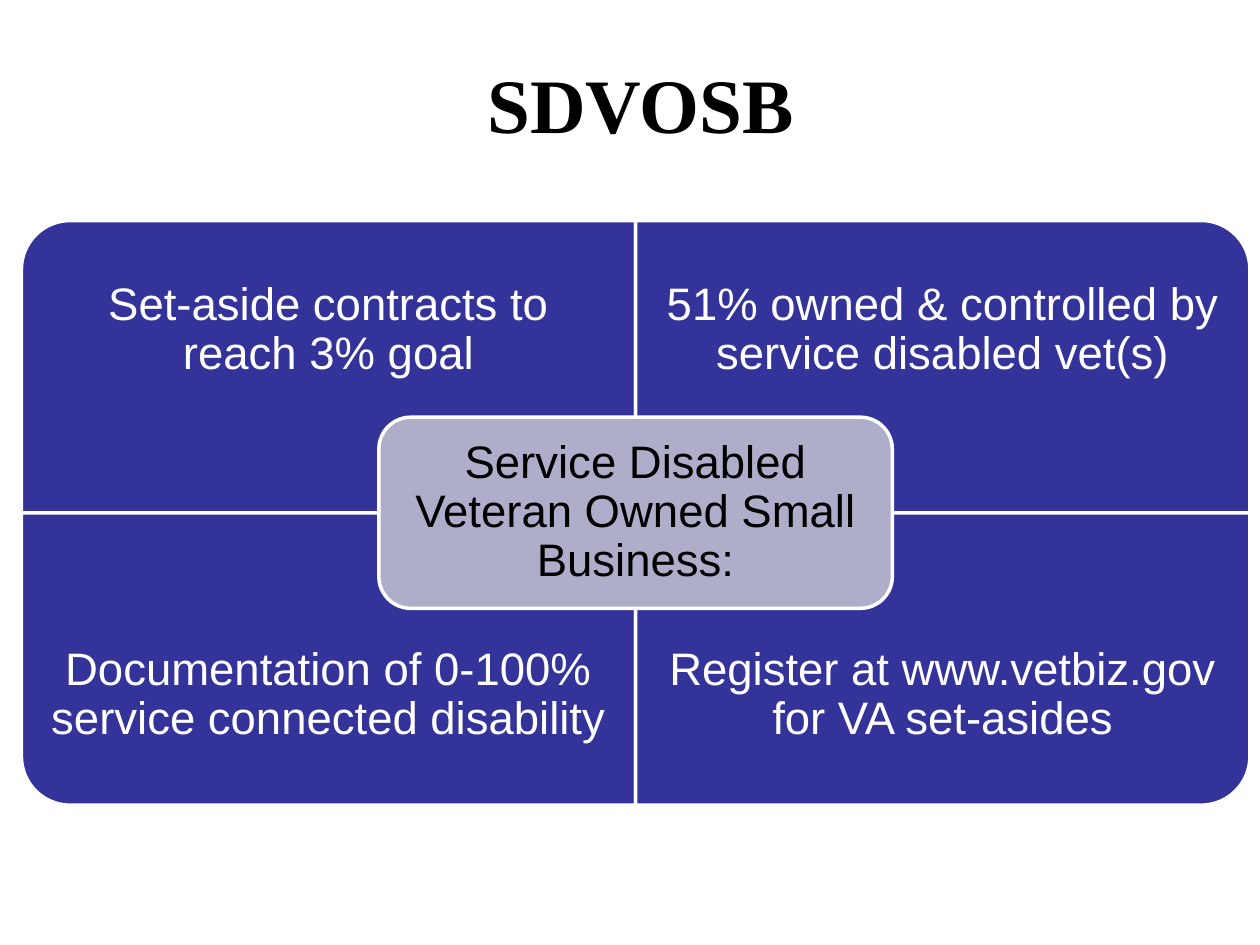
from pptx import Presentation
from pptx.dml.color import RGBColor
from pptx.enum import shapes, text
from pptx.util import Inches, Pt

COLORS = {"panel": "333399", "center": "AEAECA", "white": "FFFFFF", "black": "000000"}
W, H = 10, 7.5

# Column, row, rotation that turns the round corner outwards, wording
QUADRANTS = [
    (0, 0, 270, "Set-aside contracts to reach 3% goal"),
    (1, 0, 0, "51% owned & controlled by service disabled vet(s)"),
    (0, 1, 180, "Documentation of 0-100% service connected disability"),
    (1, 1, 90, "Register at www.vetbiz.gov for VA set-asides"),
]


def color(name):
    return RGBColor.from_string(COLORS[name])


def add_text(slide, box, words, ink, inset, size=26, font="Arial", bold=False, spacing=0.9):
    sp = slide.shapes.add_textbox(*map(Inches, box))
    tf = sp.text_frame
    tf.word_wrap = True
    tf.vertical_anchor = text.MSO_ANCHOR.MIDDLE
    tf.margin_left = tf.margin_right = Inches(inset[0])
    tf.margin_top = tf.margin_bottom = Inches(inset[1])
    p = tf.paragraphs[0]
    p.alignment = text.PP_ALIGN.CENTER
    p.line_spacing = spacing
    r = p.add_run()
    r.text = words
    r.font.size, r.font.name, r.font.bold = Pt(size), font, bold
    r.font.color.rgb = color(ink)


def add_panel(slide, kind, box, fill, rotation=0):
    x, y, w, h = box
    # A quarter turn swaps the sides around the same centre
    if rotation % 180:
        x, y, w, h = x + (w - h) / 2, y + (h - w) / 2, h, w
    sp = slide.shapes.add_shape(kind, *map(Inches, (x, y, w, h)))
    sp.rotation = rotation
    sp.shadow.inherit = False
    sp.fill.solid()
    sp.fill.fore_color.rgb = color(fill)
    sp.line.color.rgb = color("white")
    sp.line.width = Pt(2)


def add_title(slide, box):
    add_text(slide, box, "SDVOSB", "black", (0.1, 0.05), 44, "Times New Roman", True, 1)


def add_matrix(slide, box):
    x, y, w, h = box
    col, row = w / 2, h / 2

    # Four quadrants, with text in the outer three quarters of each
    text_h = row * 0.75
    for c, r, rotation, words in QUADRANTS:
        left, top = x + c * col, y + r * row
        add_panel(slide, shapes.MSO_SHAPE.ROUND_1_RECTANGLE, (left, top, col, row),
                  "panel", rotation)
        text_top = top + r * (row - text_h)
        add_text(slide, (left, text_top, col, text_h), words, "white", (0.2, 0.2))

    # Label over the crossing
    cw, ch, pad = w * 0.418, h * 0.327, 0.07
    left, top = x + (w - cw) / 2, y + (h - ch) / 2
    add_panel(slide, shapes.MSO_SHAPE.ROUNDED_RECTANGLE, (left, top, cw, ch), "center")
    add_text(slide, (left + pad, top + pad, cw - 2 * pad, ch - 2 * pad),
             "Service Disabled Veteran Owned Small Business:", "black", (0.11, 0.11))


def main():
    prs = Presentation()
    prs.slide_width, prs.slide_height = Inches(W), Inches(H)
    slide = prs.slides.add_slide(prs.slide_layouts[6])
    add_title(slide, (W * 0.117, H * 0.05, W * 0.783, H * 0.117))
    add_matrix(slide, (0.17, 1.75, 9.75, 4.64))
    prs.save("out.pptx")


if __name__ == "__main__":
    main()
